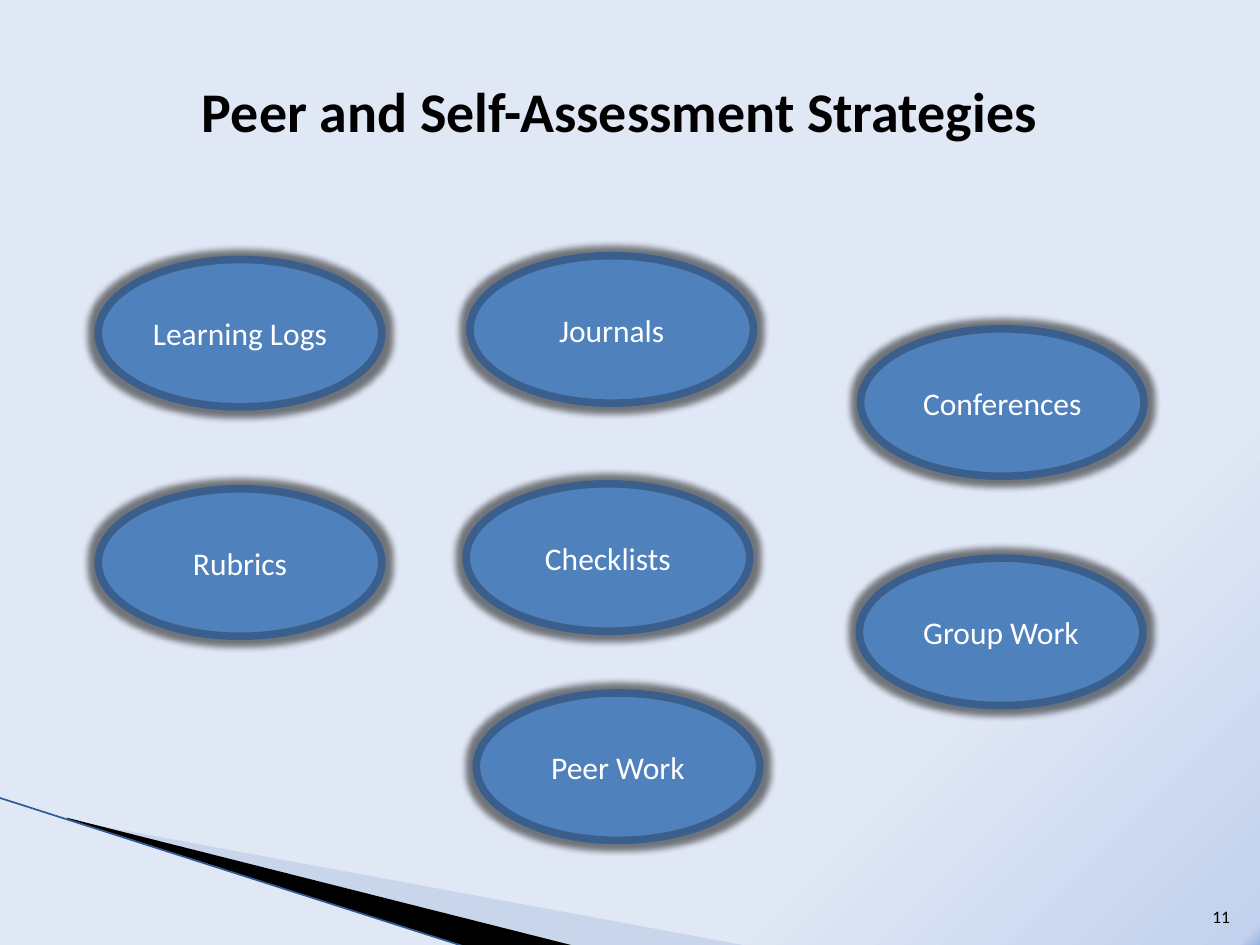
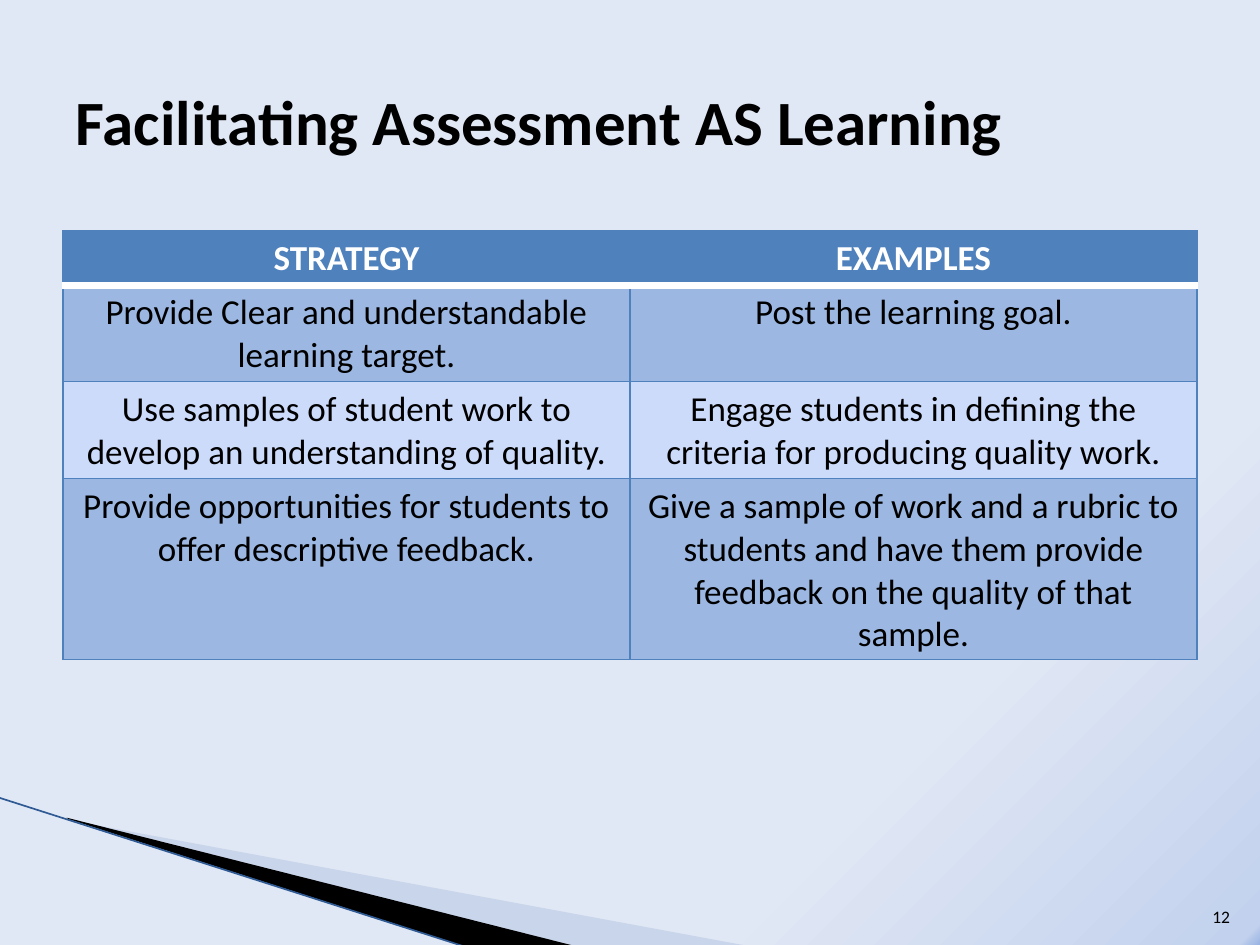
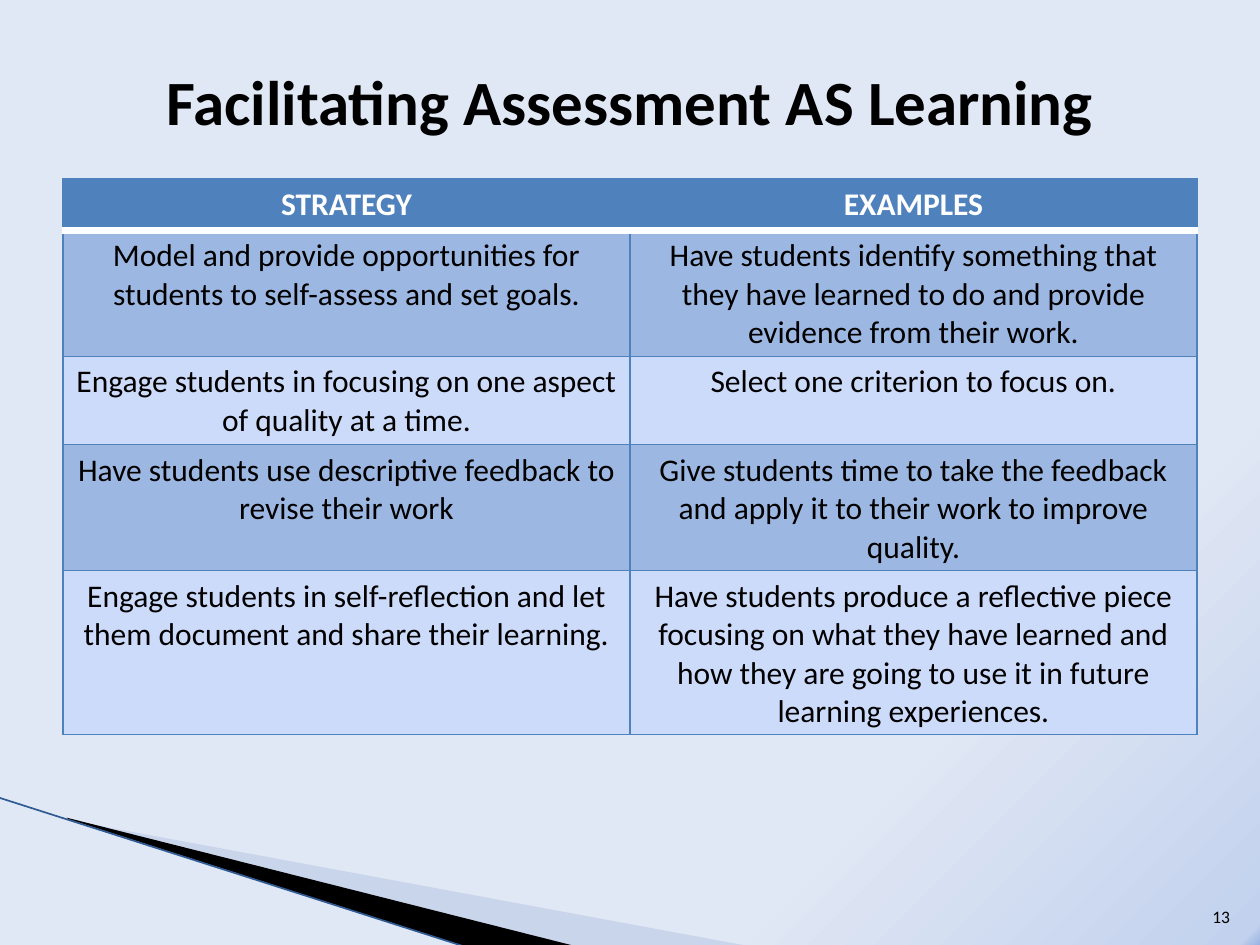
from pptx import Presentation
from pptx.dml.color import RGBColor
from pptx.enum.shapes import MSO_CONNECTOR, MSO_SHAPE
from pptx.enum.text import MSO_ANCHOR, PP_ALIGN
from pptx.oxml import parse_xml
from pptx.oxml.ns import nsdecls
from pptx.util import Inches, Pt

LEFT, CENTER, RIGHT = PP_ALIGN.LEFT, PP_ALIGN.CENTER, PP_ALIGN.RIGHT
MIDDLE, BOTTOM, TOP = MSO_ANCHOR.MIDDLE, MSO_ANCHOR.BOTTOM, MSO_ANCHOR.TOP
OVAL, STRAIGHT = MSO_SHAPE.OVAL, MSO_CONNECTOR.STRAIGHT

FONT = "Calibri"
BLACK, WHITE, BLUE = "000000", "FFFFFF", "4F81BD"
OVAL_EDGE, OVAL_GLOW = "3A5F8C", "000000"
DARK_BAND, LIGHT_BAND = "9BB7E2", "CDDBFB"
PALE_WEDGE, WEDGE_LINE = "A7B9DB", "2F5A93"
BACKGROUND_STOPS = [(0, "9AB5E4"), (1, "C2D1ED"), (25, "E1E8F5")]
TITLE_LAYOUT = 5
FIRST_NUMBER = 11

OVAL_SIZE = (2.25, 1.17)
STRATEGIES = [
    ("Learning Logs", 0, 0.03),
    ("Peer Work", 3, 3.47),
    ("Group Work", 6.04, 2.4),
    ("Rubrics", 0, 1.85),
    ("Journals", 2.95, 0),
    ("Checklists", 2.92, 1.81),
    ("Conferences", 6.05, 0.58),
]
HEADINGS = ("STRATEGY", "EXAMPLES")
TARGET_ROWS = [
    HEADINGS,
    ("Provide Clear and understandable learning target.", "Post the learning goal."),
    ("Use samples of student work to develop an understanding of quality.",
     "Engage students in defining the criteria for producing quality work."),
    ("Provide opportunities for students to offer descriptive feedback.",
     "Give a sample of work and a rubric to students and have them provide "
     "feedback on the quality of that sample."),
]
REFLECTION_ROWS = [
    HEADINGS,
    ("Model and provide opportunities for students to self-assess and set goals.",
     "Have students identify something that they have learned to do and provide "
     "evidence from their work."),
    ("Engage students in focusing on one aspect of quality at a time.",
     "Select one criterion to focus on."),
    ("Have students use descriptive feedback to revise their work",
     "Give students time to take the feedback and apply it to their work to improve quality."),
    ("Engage students in self-reflection and let them document and share their learning.",
     "Have students produce a reflective piece focusing on what they have learned and "
     "how they are going to use it in future learning experiences."),
]


def rgb(value):
    """Turn a hex string into a colour."""
    return RGBColor.from_string(value)


def write(frame, text, size, color=BLACK, bold=False, align=CENTER, anchor=MIDDLE):
    """Put one formatted paragraph into a text frame."""
    frame.word_wrap = True
    frame.vertical_anchor = anchor
    paragraph = frame.paragraphs[0]
    paragraph.alignment = align
    run = paragraph.add_run()
    run.text = text
    run.font.name = FONT
    run.font.size = Pt(size)
    run.font.bold = bold
    run.font.color.rgb = rgb(color)


def paint_background(master):
    """Give the master its gradient from the lower right corner."""
    master.background.fill.solid()
    stops = "".join(f'<a:gs pos="{pos * 1000}"><a:srgbClr val="{color}"/></a:gs>'
                    for pos, color in BACKGROUND_STOPS)
    gradient = parse_xml(
        f'<a:gradFill {nsdecls("a")} rotWithShape="1"><a:gsLst>{stops}</a:gsLst>'
        '<a:path path="circle"><a:fillToRect l="100000" t="100000"/></a:path></a:gradFill>')
    solid = master.element.xpath("./p:cSld/p:bg/p:bgPr/a:solidFill")[0]
    solid.getparent().replace(solid, gradient)


def draw_wedge(slide, points, color, opacity=100):
    """Draw a filled outline through points given in inches."""
    start, *rest = [(Inches(x), Inches(y)) for x, y in points]
    builder = slide.shapes.build_freeform(*start)
    builder.add_line_segments(rest)
    wedge = builder.convert_to_shape()
    wedge.shadow.inherit = False
    wedge.line.fill.background()
    wedge.fill.solid()
    wedge.fill.fore_color.rgb = rgb(color)
    if opacity < 100:
        fill_color = wedge.element.xpath("./p:spPr/a:solidFill/a:srgbClr")[0]
        fill_color.append(parse_xml(f'<a:alpha {nsdecls("a")} val="{opacity * 1000}"/>'))
    return wedge


def decorate_master(master, slide):
    """Draw the corner wedges and move them to the master."""
    paint_background(master)
    pale = draw_wedge(slide, [(0.55, 6.51), (5.95, 7.51), (4.56, 7.51), (0.55, 6.5)],
                      PALE_WEDGE, opacity=40)
    dark = draw_wedge(slide, [(0.53, 6.49), (4.57, 7.51), (3.72, 7.52), (0.54, 6.5)], BLACK)
    edge = slide.shapes.add_connector(
        STRAIGHT, Inches(-0.01), Inches(6.33), Inches(3.71), Inches(7.52))
    edge.line.color.rgb = rgb(WEDGE_LINE)
    edge.line.width = Pt(0.95)
    edge.element.spPr.append(parse_xml(f'<a:effectLst {nsdecls("a")}/>'))
    for position, part in enumerate((pale, dark, edge), start=2):
        master.element.cSld.spTree.insert(position, part.element)


def add_titled_slide(prs, title, left, top, size, align=CENTER):
    """Add a slide with its title and number."""
    slide = prs.slides.add_slide(prs.slide_layouts[TITLE_LAYOUT])
    heading = slide.shapes.title
    heading.left, heading.top = Inches(left), Inches(top)
    heading.width, heading.height = Inches(9), Inches(1.25)
    write(heading.text_frame, title, size, bold=True, align=align)
    number = slide.shapes.add_textbox(Inches(9.46), Inches(7.01), Inches(0.4), Inches(0.4))
    write(number.text_frame, str(FIRST_NUMBER + len(prs.slides) - 1), 10,
          align=RIGHT, anchor=BOTTOM)
    return slide


def add_strategy_ovals(slide, left, top):
    """Place the glowing strategy ovals relative to a corner."""
    width, height = OVAL_SIZE
    for strategy, dx, dy in STRATEGIES:
        oval = slide.shapes.add_shape(
            OVAL, Inches(left + dx), Inches(top + dy), Inches(width), Inches(height))
        oval.fill.solid()
        oval.fill.fore_color.rgb = rgb(BLUE)
        oval.line.color.rgb = rgb(OVAL_EDGE)
        oval.line.width = Pt(4.33)
        oval.shadow.inherit = False
        oval.element.xpath("./p:spPr/a:effectLst")[0].append(parse_xml(
            f'<a:glow {nsdecls("a")} rad="{Inches(0.1)}"><a:srgbClr val="{OVAL_GLOW}">'
            '<a:alpha val="50000"/></a:srgbClr></a:glow>'))
        oval.text_frame.margin_left = oval.text_frame.margin_right = 0
        write(oval.text_frame, strategy, 18, color=WHITE)


def set_borders(cell, **overrides):
    """Outline a cell in blue, with (colour, width) overrides by side."""
    properties = cell._tc.get_or_add_tcPr()
    for position, side in enumerate("LRTB"):
        color, width = overrides.get(side, (BLUE, 0.75))
        properties.insert(position, parse_xml(
            f'<a:ln{side} {nsdecls("a")} w="{Pt(width)}"><a:solidFill>'
            f'<a:srgbClr val="{color}"/></a:solidFill></a:ln{side}>'))


def add_strategy_table(slide, rows, left, top, size):
    """Add the two-column table of strategies and examples."""
    table = slide.shapes.add_table(
        len(rows), len(HEADINGS), Inches(left), Inches(top),
        Inches(9), Inches(0.41 * len(rows))).table
    rule = (WHITE, 4.33)
    for r, row in enumerate(rows):
        is_header = r == 0
        fill = BLUE if is_header else DARK_BAND if r % 2 else LIGHT_BAND
        borders = {0: {"B": rule}, 1: {"T": rule}}.get(r, {})
        for c, text in enumerate(row):
            cell = table.cell(r, c)
            write(cell.text_frame, text, size, color=WHITE if is_header else BLACK,
                  bold=is_header, anchor=TOP)
            cell.fill.solid()
            cell.fill.fore_color.rgb = rgb(fill)
            set_borders(cell, **borders)


def main():
    """Build the three slides."""
    prs = Presentation()
    prs.slide_width, prs.slide_height = Inches(10), Inches(7.5)

    overview = add_titled_slide(prs, "Peer and Self-Assessment Strategies", 0.42, 0.25, 32)
    decorate_master(prs.slide_master, overview)
    add_strategy_ovals(overview, 0.78, 2.03)

    facilitating = "Facilitating Assessment AS Learning"
    targets = add_titled_slide(prs, facilitating, 0.5, 0.33, 36, align=LEFT)
    add_strategy_table(targets, TARGET_ROWS, 0.5, 1.83, 20)

    reflection = add_titled_slide(prs, facilitating, 0.5, 0.17, 36)
    add_strategy_table(reflection, REFLECTION_ROWS, 0.5, 1.42, 18)

    prs.save("out.pptx")


if __name__ == "__main__":
    main()
